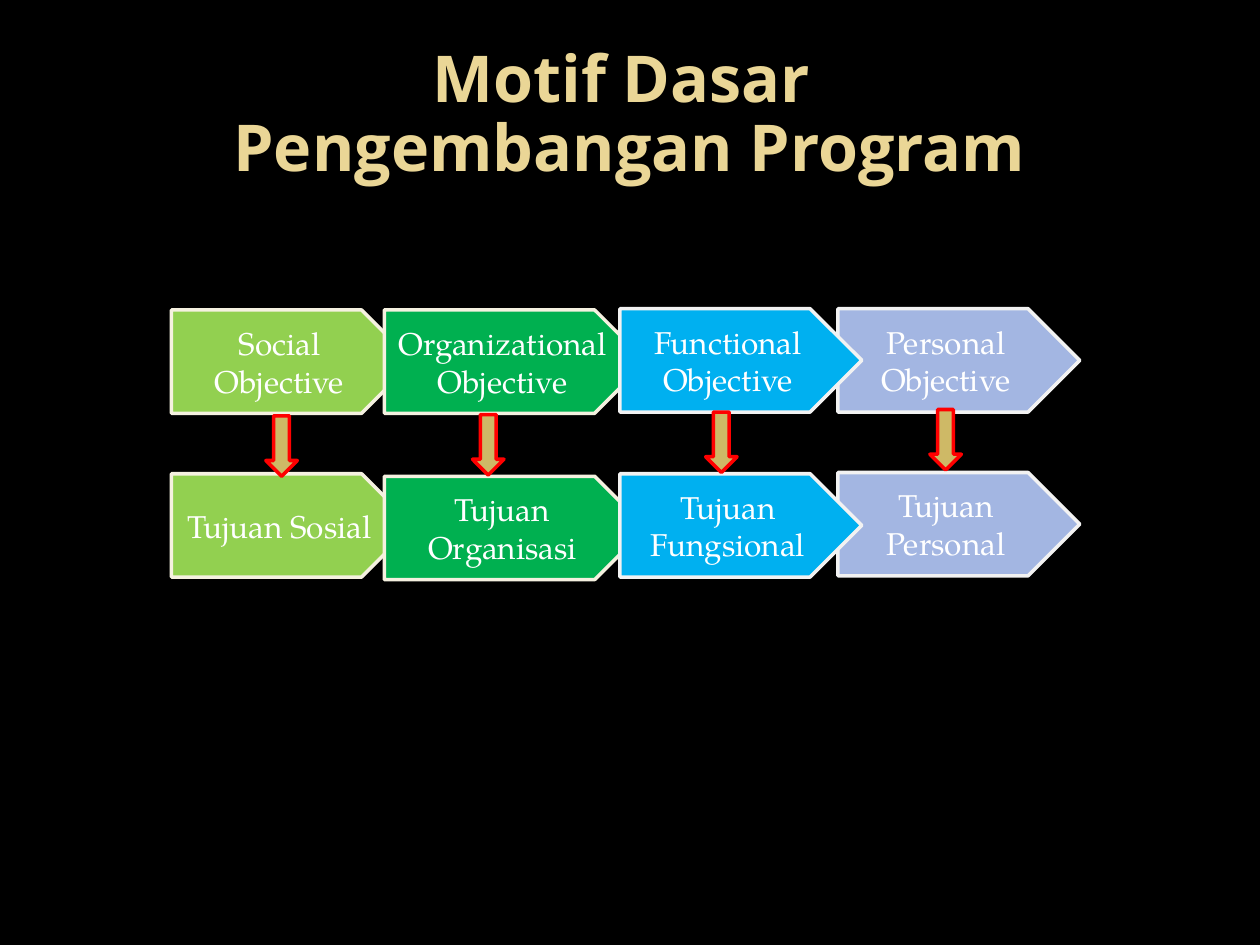
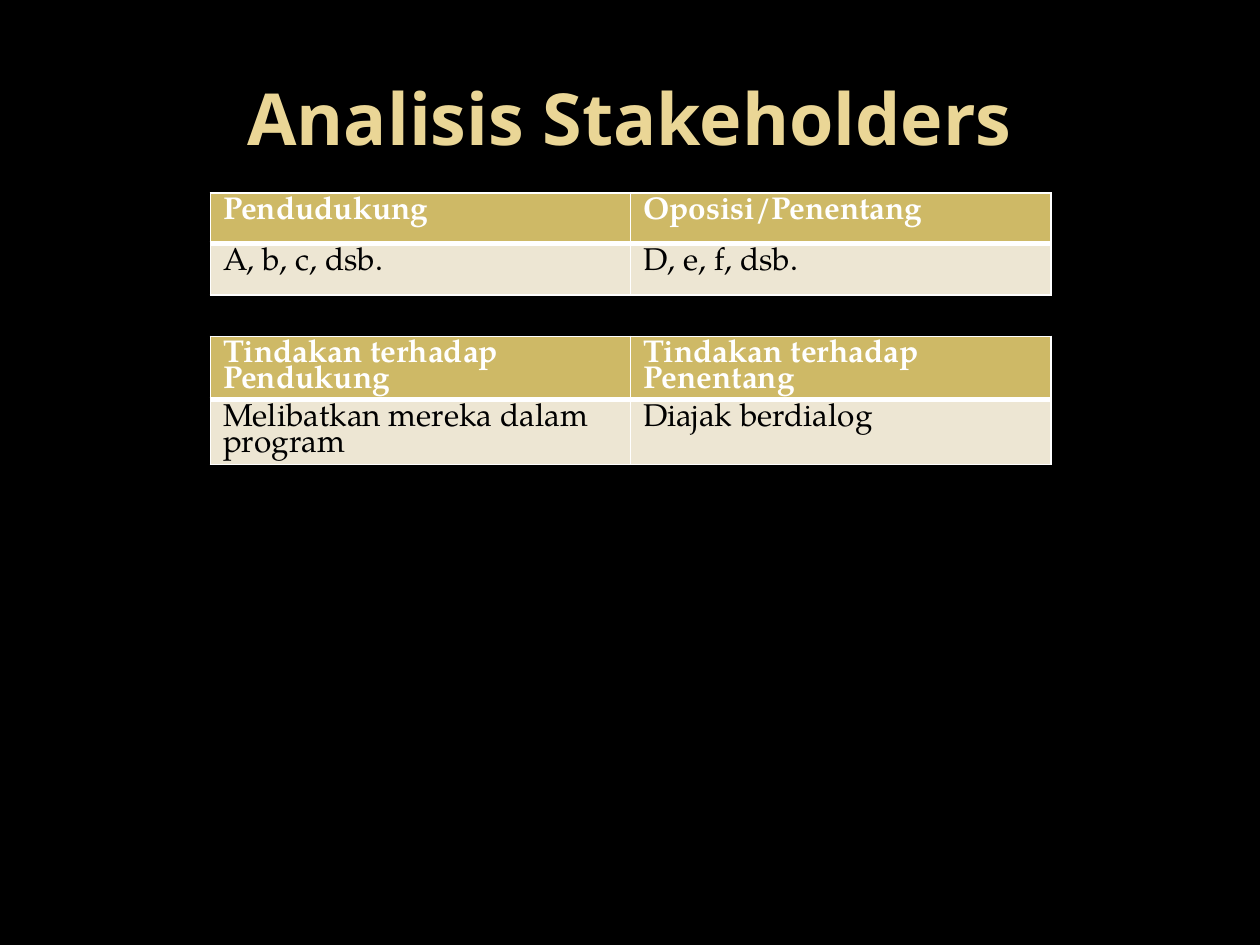
from lxml.etree import SubElement as Sub
from pptx import Presentation
from pptx.dml.color import RGBColor as RGB
from pptx.enum.shapes import MSO_SHAPE as Kind
from pptx.enum.text import MSO_ANCHOR as Anchor, MSO_AUTO_SIZE as Fit, PP_ALIGN as Align
from pptx.oxml.ns import qn
from pptx.util import Inches, Pt

HUES = {
    "back": "000000", "title": "EAD696", "white": "FFFFFF", "black": "000000",
    "lime": "92D050", "green": "00B050", "sky": "00B0F0", "lilac": "A3B6E2",
    "cream": "F5F1E0", "pale": "F2F2F2", "gold": "CEB966", "red": "FF0000",
    "sand": "EDE6D3",
}
HEAD, BODY = "Open Sans", "TeX Gyre Pagella"


def hue(name):
    return RGB.from_string(HUES[name])


def paint(fill, name):
    fill.solid()
    fill.fore_color.rgb = hue(name)


def add_run(para, text, size, color, face=BODY, bold=False):
    run = para.add_run()
    run.text = text
    font = run.font
    font.name, font.size, font.bold = face, Pt(size), bold
    font.color.rgb = hue(color)


def add_slide(deck, lines, size):
    """Add a slide whose title has the given lines."""
    slide = deck.slides.add_slide(deck.slide_layouts[5])
    title = slide.shapes.title
    title.left, title.top = Inches(0.5), Inches(0.3)
    title.width, title.height = Inches(9), Inches(1.25)
    frame = title.text_frame
    frame.auto_size, frame.vertical_anchor = Fit.NONE, Anchor.MIDDLE
    para = frame.paragraphs[0]
    para.alignment = Align.CENTER
    if len(lines) > 1:
        para.line_spacing = 0.89
    for i, line in enumerate(lines):
        if i:
            para.add_line_break()
        add_run(para, line, size, "title", HEAD, True)
    return slide


def add_block(slide, kind, box, fill, edge):
    shape = slide.shapes.add_shape(kind, *map(Inches, box))
    shape.shadow.inherit = False
    paint(shape.fill, fill)
    shape.line.color.rgb = hue(edge)
    shape.line.width = Pt(2)
    return shape


def add_plate(slide, box, text, fill, edge):
    """Draw one pentagon with centred text."""
    frame = add_block(slide, Kind.PENTAGON, box, fill, edge).text_frame
    frame.word_wrap, frame.vertical_anchor = True, Anchor.MIDDLE
    para = frame.paragraphs[0]
    para.alignment = Align.CENTER
    add_run(para, text, 18, "white")


def add_flow(slide, left, top):
    """Draw two rows of pentagons, linked by down arrows."""
    # offset x, width, fill, edge, then (offset y, text) of each row
    plates = [
        (0, 1.92, "lime", "cream", (0.01, "Social Objective"), (1.31, "Tujuan Sosial")),
        (1.69, 2.08, "green", "cream", (0.01, "Organizational Objective"),
         (1.33, "Tujuan Organisasi")),
        (5.29, 1.92, "lilac", "pale", (0, "Personal Objective"), (1.3, "Tujuan Personal")),
        (3.56, 1.92, "sky", "pale", (0, "Functional Objective"), (1.31, "Tujuan Fungsional")),
    ]
    for x, width, fill, edge, *rows in plates:
        for y, text in rows:
            add_plate(slide, (left + x, top + y, width, 0.82), text, fill, edge)
    for x, y in [(0.75, 0.85), (2.39, 0.84), (4.24, 0.82), (6.02, 0.8)]:
        add_block(slide, Kind.DOWN_ARROW, (left + x, top + y, 0.25, 0.48), "gold", "red")


def add_edges(cell, thick):
    """Give a cell white borders, with one thick side."""
    props = cell._tc.get_or_add_tcPr()
    for side in ("lnL", "lnR", "lnT", "lnB"):
        width = Pt(3 if side == thick else 1)
        line = Sub(props, qn("a:" + side), w=str(width))
        Sub(Sub(line, qn("a:solidFill")), qn("a:srgbClr"), val=HUES["white"])


def add_grid(slide, box, rows):
    """Draw a table with a gold header row."""
    grid = slide.shapes.add_table(len(rows), len(rows[0]), *map(Inches, box)).table
    for r, row in enumerate(rows):
        head = r == 0
        for c, text in enumerate(row):
            cell = grid.cell(r, c)
            add_edges(cell, "lnB" if head else "lnT")
            paint(cell.fill, "gold" if head else "sand")
            para = cell.text_frame.paragraphs[0]
            para.line_spacing = 0.82
            add_run(para, text, 18, "white" if head else "black", bold=head)


def main():
    deck = Presentation()
    deck.slide_width, deck.slide_height = Inches(10), Inches(7.5)
    paint(deck.slide_master.background.fill, "back")

    # Motives
    slide = add_slide(deck, ["Motif Dasar ", "Pengembangan Program"], 36.9)
    add_flow(slide, 1.36, 2.45)

    # Stakeholders
    slide = add_slide(deck, ["Analisis Stakeholders"], 41)
    add_grid(slide, (1.67, 1.53, 6.67, 0.81), [
        ("Pendudukung", "Oposisi/Penentang"),
        ("A, b, c, dsb.", "D, e, f, dsb."),
    ])
    add_grid(slide, (1.67, 2.67, 6.67, 0.81), [
        ("Tindakan terhadap Pendukung", "Tindakan terhadap Penentang"),
        ("Melibatkan mereka dalam program", "Diajak berdialog"),
    ])
    deck.save("out.pptx")


if __name__ == "__main__":
    main()
